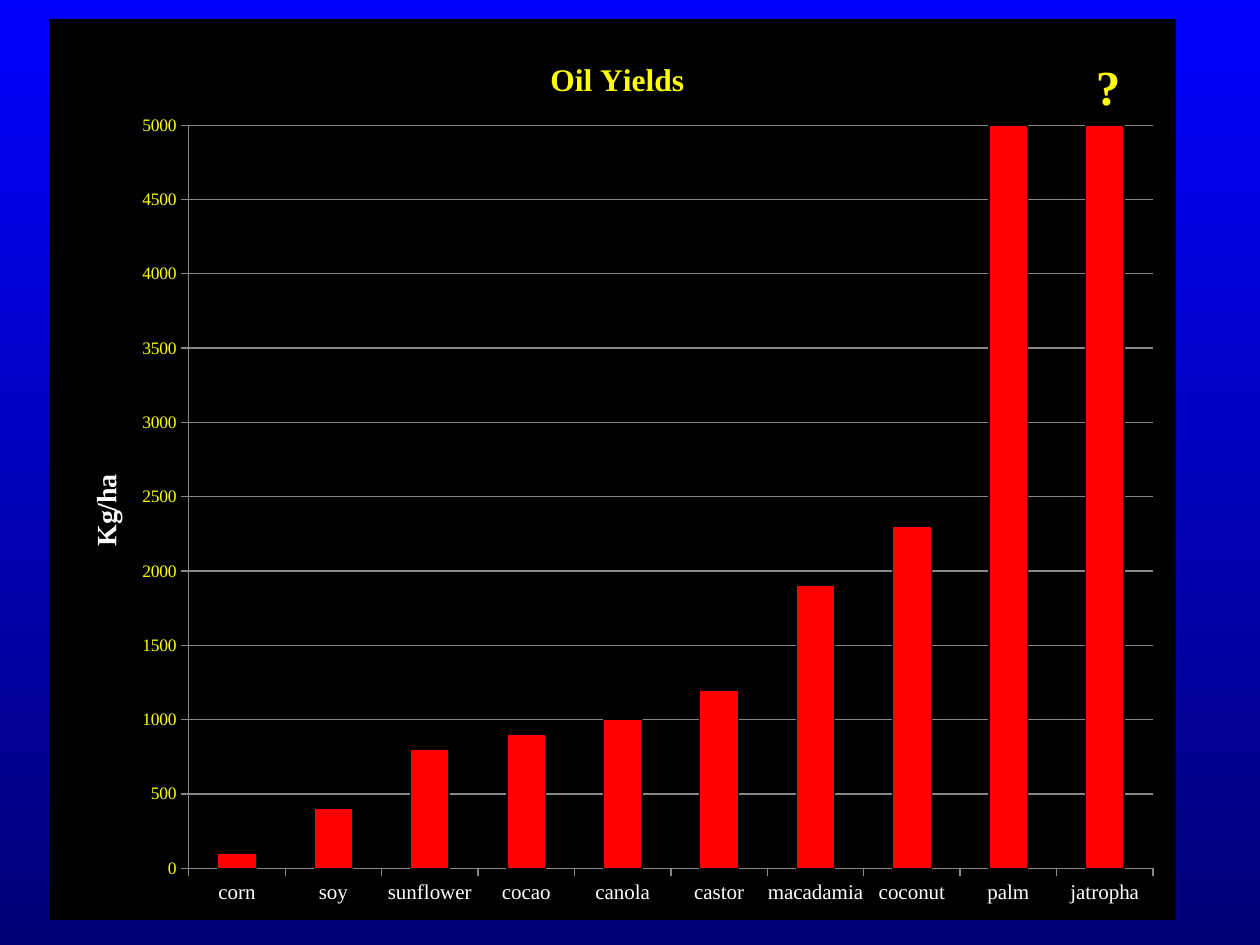
from dataclasses import dataclass

from lxml import etree
from pptx import Presentation
from pptx.chart.data import CategoryChartData
from pptx.dml.color import RGBColor
from pptx.enum.chart import XL_CHART_TYPE, XL_TICK_MARK
from pptx.enum.text import MSO_AUTO_SIZE
from pptx.oxml import parse_xml
from pptx.oxml.ns import nsdecls, qn
from pptx.util import Inches, Pt

COLUMNS = XL_CHART_TYPE.COLUMN_CLUSTERED
TICK_OUTSIDE = XL_TICK_MARK.OUTSIDE
TICK_NONE = XL_TICK_MARK.NONE
GROW = MSO_AUTO_SIZE.SHAPE_TO_FIT_TEXT


@dataclass(frozen=True)
class Theme:
    font: str = "Times New Roman"
    sky: str = "0000FF"
    deep: str = "000076"
    panel: str = "000000"
    bar: str = "FF0000"
    accent: str = "FFFF00"
    label: str = "FFFFFF"
    rule: str = "878787"
    tick_size: float = 10
    category_size: float = 12
    axis_title_size: float = 16
    title_size: float = 18
    mark_size: float = 28


THEME = Theme()
SLIDE_WIDTH, SLIDE_HEIGHT = Inches(10), Inches(7.5)
CHART_BOX = [Inches(n) for n in (0.39, 0.15, 8.94, 7.15)]
MARK_BOX = [Inches(n) for n in (8.6, 0.4, 0.4, 0.57)]

YIELDS = {
    "corn": 100, "soy": 400, "sunflower": 800, "cocao": 900, "canola": 1000,
    "castor": 1200, "macadamia": 1900, "coconut": 2300, "palm": 5000,
    "jatropha": 5000,
}


def style_font(font, size, color, bold=False):
    font.name = THEME.font
    font.size = Pt(size)
    font.bold = bold
    font.color.rgb = RGBColor.from_string(color)


def style_line(line, color):
    line.width = Pt(0.75)
    line.color.rgb = RGBColor.from_string(color)


def panel_fill():
    return parse_xml(
        f'<c:spPr {nsdecls("c", "a")}><a:solidFill><a:srgbClr val="{THEME.panel}"/>'
        "</a:solidFill><a:ln><a:noFill/></a:ln></c:spPr>")


def set_layout(element, inner=False, **shares):
    """Place a chart part by shares (x, y, w, h) of the chart's size."""
    layout = element.find(qn("c:layout"))
    if layout is None:
        layout = etree.Element(qn("c:layout"))
        text = element.find(qn("c:tx"))
        element.insert(0 if text is None else element.index(text) + 1, layout)
    manual = etree.SubElement(layout, qn("c:manualLayout"))
    settings = {"layoutTarget": "inner"} if inner else {}
    settings.update(xMode="edge", yMode="edge", **shares)
    for tag, value in settings.items():
        etree.SubElement(manual, qn(f"c:{tag}")).set("val", str(value))


def set_title(owner_title, text, size, color, x, y):
    frame = owner_title.text_frame
    frame.text = text
    style_font(frame.paragraphs[0].runs[0].font, size, color, bold=True)
    set_layout(owner_title._element, x=x, y=y)


def style_axis(axis, size, color):
    axis.major_tick_mark = TICK_OUTSIDE
    axis.minor_tick_mark = TICK_NONE
    style_font(axis.tick_labels.font, size, color)
    style_line(axis.format.line, THEME.rule)


def add_yield_chart(slide, box):
    data = CategoryChartData()
    data.categories = list(YIELDS)
    data.add_series("Series 1", list(YIELDS.values()))
    chart = slide.shapes.add_chart(COLUMNS, *box, data).chart
    chart.has_legend = False
    style_font(chart.font, THEME.tick_size, THEME.panel)

    chart.has_title = True
    set_title(chart.chart_title, "Oil Yields", THEME.title_size, THEME.accent,
              x=0.44, y=0.04)
    chart.chart_title._element.find(qn("c:overlay")).set("val", "1")

    style_axis(chart.category_axis, THEME.category_size, THEME.label)
    values = chart.value_axis
    style_axis(values, THEME.tick_size, THEME.accent)
    values.minimum_scale, values.maximum_scale = 0, 5000
    values.major_unit = 500
    values.has_major_gridlines = True
    style_line(values.major_gridlines.format.line, THEME.rule)
    values.has_title = True
    set_title(values.axis_title, "Kg/ha", THEME.axis_title_size, THEME.label,
              x=0.03, y=0.5)

    plot = chart.plots[0]
    plot.gap_width = 150
    plot.vary_by_categories = False
    bars = plot.series[0].format
    bars.fill.solid()
    bars.fill.fore_color.rgb = RGBColor.from_string(THEME.bar)
    style_line(bars.line, THEME.panel)

    chart_part = chart._chartSpace.find(qn("c:chart"))
    chart_part.addnext(panel_fill())
    plot_area = chart_part.find(qn("c:plotArea"))
    plot_area.append(panel_fill())
    set_layout(plot_area, inner=True, x=0.124, y=0.118, w=0.856, h=0.825)


def add_question_mark(slide, box):
    frame = slide.shapes.add_textbox(*box).text_frame
    frame.word_wrap = False
    frame.auto_size = GROW
    frame.text = "?"
    style_font(frame.paragraphs[0].runs[0].font, THEME.mark_size, THEME.accent,
               bold=True)


def paint_background(slide):
    fill = slide.background.fill
    fill.gradient()
    fill.gradient_angle = 270
    for stop, color in zip(fill.gradient_stops, (THEME.sky, THEME.deep)):
        stop.color.rgb = RGBColor.from_string(color)


def main():
    deck = Presentation()
    deck.slide_width, deck.slide_height = SLIDE_WIDTH, SLIDE_HEIGHT
    slide = deck.slides.add_slide(deck.slide_layouts[6])
    paint_background(slide)
    add_yield_chart(slide, CHART_BOX)
    add_question_mark(slide, MARK_BOX)
    deck.save("out.pptx")


if __name__ == "__main__":
    main()
